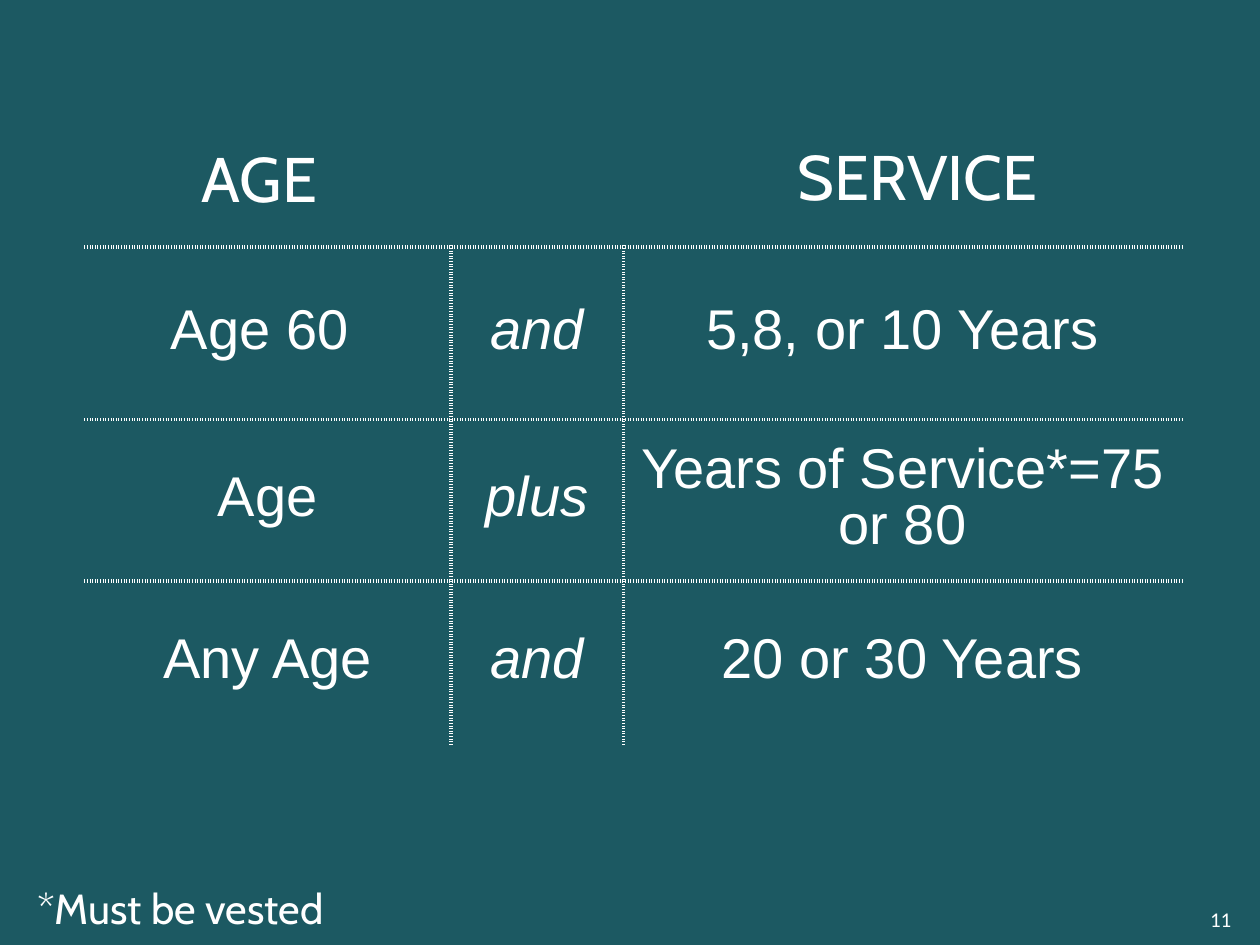
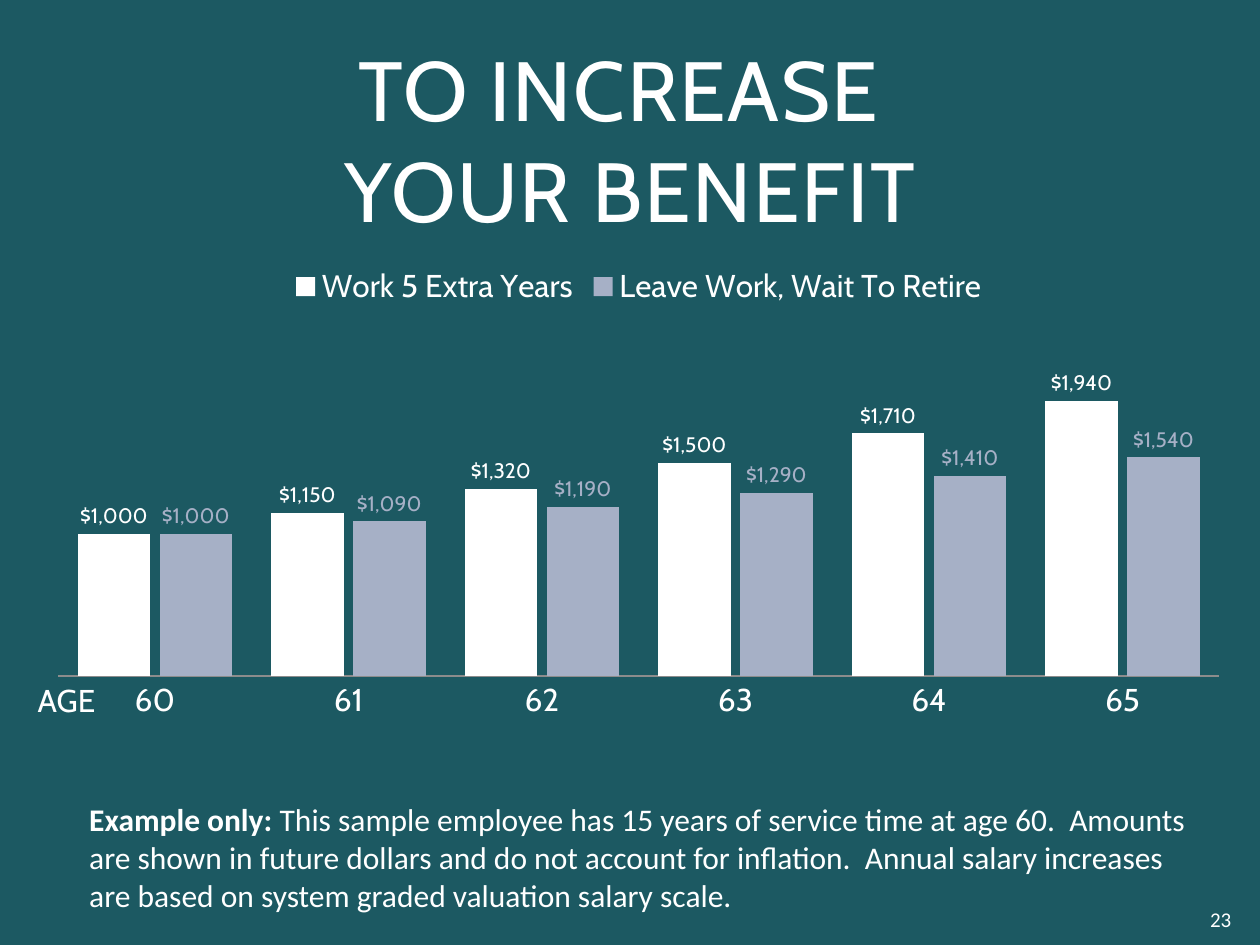
from lxml.etree import SubElement
from pptx import Presentation
from pptx.chart.data import CategoryChartData
from pptx.dml.color import RGBColor
from pptx.enum.chart import XL_CHART_TYPE, XL_LABEL_POSITION, XL_LEGEND_POSITION, XL_TICK_MARK
from pptx.enum.text import MSO_ANCHOR, PP_ALIGN
from pptx.oxml import parse_xml
from pptx.oxml.ns import nsdecls, qn
from pptx.util import Pt

COLORS = {"background": "1C5962", "text": "FFFFFF", "wait": "A6B0C6", "axis": "8C8C8C"}
HEADING_FONT, BODY_FONT, TABLE_FONT = "Cabin", "Calibri", "Arial"

ELIGIBILITY = [
    ("Age 60 ", "and", "5,8, or 10 Years"),
    ("Age", "plus", "Years of Service*=75 or 80"),
    ("Any Age", "and", "20 or 30 Years"),
]
COLUMN_WIDTHS = (209.5, 98.6, 319)
ROW_HEIGHTS = (98.6, 92.2, 93.6)
TABLE_LEFT, TABLE_TOP = 48.2, 141.1
HEADINGS = [("AGE", (35.3, 76.3, 226, 51)), ("SERVICE", (360, 74.9, 329, 51))]

TITLE = "TO INCREASE \vYOUR BENEFIT"
AGES = ("60", "61", "62", "63", "64", "65")
BENEFITS = [
    ("Work 5 Extra Years", "text", (1000, 1150, 1320, 1500, 1710, 1940)),
    ("Leave Work, Wait To Retire", "wait", (1000, 1090, 1190, 1290, 1410, 1540)),
]
DOLLARS = '"$"#,##0;[Red]\\-"$"#,##0'
PLOT_AREA = {"x": 0.02, "y": 0.145, "w": 0.96, "h": 0.743}
EXAMPLE = [
    ("Example only:", True),
    (" This sample employee has 15 years of service time at age 60.  Amounts are shown in "
     "future dollars and do not account for inflation.  Annual salary increases are based on "
     "system graded valuation salary scale.", False),
]


def color(name):
    return RGBColor.from_string(COLORS[name])


def set_font(font, size, name=HEADING_FONT, fill="text", bold=False, italic=False):
    font.size, font.name, font.bold, font.italic = Pt(size), name, bold, italic
    font.color.rgb = color(fill)


def write(frame, text, size, font=HEADING_FONT, align=PP_ALIGN.LEFT, anchor=MSO_ANCHOR.TOP,
          italic=False, line_spacing=None):
    """Fill a text frame with a string or with (string, bold) runs."""
    frame.word_wrap = True
    frame.vertical_anchor = anchor
    paragraph = frame.paragraphs[0]
    paragraph.alignment = align
    if line_spacing:
        paragraph.line_spacing = Pt(line_spacing)
    if isinstance(text, str):
        paragraph.text = text
    else:
        for words, bold in text:
            set_font_run = paragraph.add_run()
            set_font_run.text = words
            set_font_run.font.bold = bold
    for run in paragraph.runs:
        set_font(run.font, size, font, bold=bool(run.font.bold), italic=italic)
    return paragraph


def add_text(slide, text, box, size, **formatting):
    shape = slide.shapes.add_textbox(*map(Pt, box))
    write(shape.text_frame, text, size, **formatting)


def add_slide_number(slide, number):
    add_text(slide, str(number), (542.9, 511, 167.8, 28.8), 12, font=BODY_FONT,
             align=PP_ALIGN.RIGHT, anchor=MSO_ANCHOR.MIDDLE)


def set_borders(cell, dotted_sides):
    """Dot the named sides (L, R, T, B) and clear the others."""
    properties = cell._tc.get_or_add_tcPr()
    for index, side in enumerate("LRTB"):
        line = parse_xml(f'<a:ln{side} {nsdecls("a")} w="28575"/>')
        if side in dotted_sides:
            fill = SubElement(line, qn("a:solidFill"))
            SubElement(fill, qn("a:srgbClr"), val=COLORS["text"])
            SubElement(line, qn("a:prstDash"), val="sysDot")
        else:
            SubElement(line, qn("a:noFill"))
        properties.insert(index, line)


def add_eligibility_table(slide):
    rows, columns = len(ROW_HEIGHTS), len(COLUMN_WIDTHS)
    table = slide.shapes.add_table(rows, columns, Pt(TABLE_LEFT), Pt(TABLE_TOP),
                                   Pt(sum(COLUMN_WIDTHS)), Pt(sum(ROW_HEIGHTS))).table
    table.first_row = table.horz_banding = False
    for column, width in zip(table.columns, COLUMN_WIDTHS):
        column.width = Pt(width)
    for row_index, (row, height) in enumerate(zip(table.rows, ROW_HEIGHTS)):
        row.height = Pt(height)
        for column_index, cell in enumerate(row.cells):
            cell.fill.background()
            cell.vertical_anchor = MSO_ANCHOR.MIDDLE
            write(cell.text_frame, ELIGIBILITY[row_index][column_index], 32, font=TABLE_FONT,
                  align=PP_ALIGN.CENTER, italic=column_index == 1, line_spacing=32)
            sides = "T"
            sides += "B" if row_index < rows - 1 else ""
            sides += "L" if column_index > 0 else ""
            sides += "R" if column_index < columns - 1 else ""
            set_borders(cell, sides)


def add_benefit_chart(slide):
    data = CategoryChartData(number_format=DOLLARS)
    data.categories = AGES
    for name, _, values in BENEFITS:
        data.add_series(name, values)
    chart = slide.shapes.add_chart(XL_CHART_TYPE.COLUMN_CLUSTERED, Pt(19.4), Pt(144),
                                   Pt(691.2), Pt(272.9), data).chart
    set_font(chart.font, 18)
    chart.has_title = False
    chart.has_legend = True
    chart.legend.position = XL_LEGEND_POSITION.TOP
    chart.legend.include_in_layout = False
    set_font(chart.legend.font, 18)

    category_axis, value_axis = chart.category_axis, chart.value_axis
    category_axis.major_tick_mark = XL_TICK_MARK.NONE
    category_axis.format.line.color.rgb = color("axis")
    set_font(category_axis.tick_labels.font, 18)
    value_axis.minimum_scale, value_axis.maximum_scale = 0, 2500
    value_axis.has_major_gridlines = False
    value_axis.visible = False

    plot = chart.plots[0]
    plot.gap_width, plot.overlap, plot.vary_by_categories = 54, -13, False
    for series, (_, fill, _) in zip(plot.series, BENEFITS):
        series.format.fill.solid()
        series.format.fill.fore_color.rgb = color(fill)
        labels = series.data_labels
        labels.show_value = True
        labels.position = XL_LABEL_POSITION.OUTSIDE_END
        labels.number_format, labels.number_format_is_linked = DOLLARS, False
        set_font(labels.font, 12, fill=fill)

    plot_area = chart._chartSpace.chart.plotArea
    for old_layout in plot_area.findall(qn("c:layout")):
        plot_area.remove(old_layout)
    settings = {"layoutTarget": "inner", "xMode": "edge", "yMode": "edge", **PLOT_AREA}
    layout = parse_xml(f'<c:layout {nsdecls("c")}><c:manualLayout/></c:layout>')
    for name, value in settings.items():
        SubElement(layout[0], qn(f"c:{name}"), val=str(value))
    plot_area.insert(0, layout)


def build_eligibility_slide(presentation):
    slide = presentation.slides.add_slide(presentation.slide_layouts[6])
    add_eligibility_table(slide)
    for heading, box in HEADINGS:
        add_text(slide, heading, box, 36, align=PP_ALIGN.CENTER)
    add_text(slide, "*Must be vested", (14.4, 501, 551.5, 36), 24)
    add_slide_number(slide, 11)


def build_benefit_slide(presentation):
    slide = presentation.slides.add_slide(presentation.slide_layouts[5])
    title = slide.shapes.title
    title.left, title.top, title.width, title.height = map(Pt, (0, 18.7, 720, 118.1))
    frame = title.text_frame
    frame.margin_left = frame.margin_right = frame.margin_top = frame.margin_bottom = 0
    paragraph = write(frame, TITLE, 48, align=PP_ALIGN.CENTER, anchor=MSO_ANCHOR.BOTTOM)
    for run in paragraph.runs:
        run.font._element.set("spc", "100")
    add_benefit_chart(slide)
    add_text(slide, "AGE", (14.4, 385.9, 58.3, 28.8), 18)
    add_slide_number(slide, 23)
    add_text(slide, EXAMPLE, (43.9, 453.6, 648, 72.7), 18, font=BODY_FONT)


def main():
    presentation = Presentation()
    presentation.slide_width, presentation.slide_height = Pt(720), Pt(540)
    background = presentation.slide_master.background.fill
    background.solid()
    background.fore_color.rgb = color("background")
    build_eligibility_slide(presentation)
    build_benefit_slide(presentation)
    presentation.save("out.pptx")


if __name__ == "__main__":
    main()
